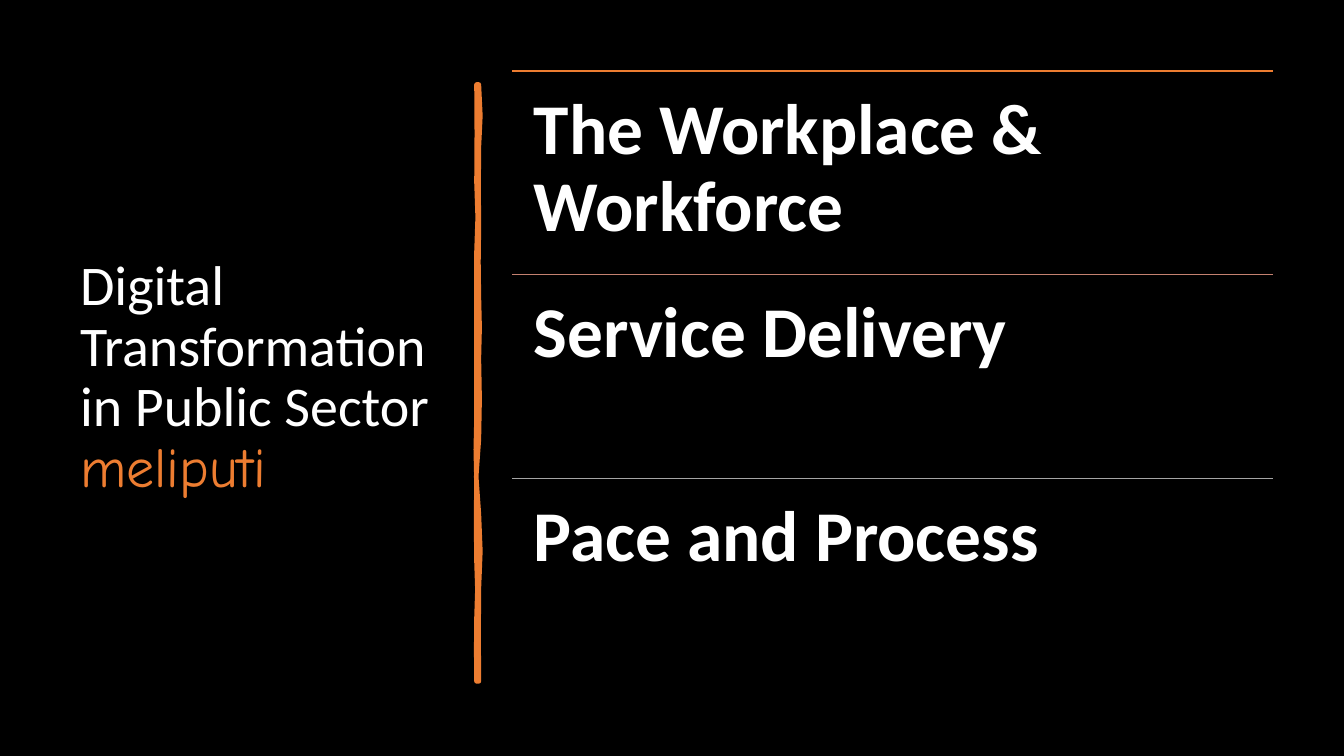
from dataclasses import dataclass

from lxml import etree
from pptx import Presentation
from pptx.dml.color import RGBColor
from pptx.enum.shapes import MSO_CONNECTOR
from pptx.enum.text import MSO_ANCHOR
from pptx.oxml.ns import qn
from pptx.slide import Slide
from pptx.text.text import TextFrame
from pptx.util import Cm, Pt

STRAIGHT = MSO_CONNECTOR.STRAIGHT
MIDDLE, TOP = MSO_ANCHOR.MIDDLE, MSO_ANCHOR.TOP

BLACK, WHITE, ORANGE = "000000", "FFFFFF", "ED7D31"
BODY_FONT, ACCENT_FONT = "Calibri", "Comic Neue"

# Lengths in centimetres
TOPIC_LEFT, TOPIC_TOP = 12.91, 1.79
TOPIC_WIDTH, TOPIC_HEIGHT = 19.17, 5.13
TOPIC_INSET = 0.54
DIVIDER_LEFT, DIVIDER_RIGHT = 12.01, 12.07
DIVIDER_TOP, DIVIDER_BOTTOM = 2.13, 17.17
CURVE_STEPS = 2


@dataclass(frozen=True)
class Topic:
    text: str
    rule_color: str


@dataclass(frozen=True)
class Wave:
    """One curve of a wavy edge: sideways pull at each third, then its end."""
    first_pull: float
    second_pull: float
    end: float


TOPICS = [
    Topic("The Workplace & Workforce", ORANGE),
    Topic("Service Delivery", "C48170"),
    Topic("Pace and Process", "A5A5A5"),
]

RIGHT_EDGE = [
    Wave(0.05, 0.05, 3.71), Wave(-0.05, 0.03, 5.74), Wave(-0.03, 0, 7.47),
    Wave(0, 0.05, 9.04), Wave(-0.05, 0.1, 11.07), Wave(-0.1, -0.08, 12.95),
    Wave(0.05, 0.05, 14.83), Wave(-0.05, 0.03, DIVIDER_BOTTOM),
]
LEFT_EDGE = [
    Wave(0.03, -0.05, 15.57), Wave(0.03, 0.03, 14.15), Wave(-0.03, 0, 12.12),
    Wave(0, -0.05, 10.54), Wave(0.03, -0.03, 8.51), Wave(0.03, -0.03, 6.35),
    Wave(0.03, 0.05, 4.6), Wave(-0.08, 0.1, DIVIDER_TOP),
]


def rgb(color: str) -> RGBColor:
    return RGBColor.from_string(color)


def edge_points(x: float, start: float, waves: list[Wave]) -> list[tuple[Cm, Cm]]:
    """Sample the cubic curves that run along one edge of the divider."""
    points = [(Cm(x), Cm(start))]
    for wave in waves:
        for step in range(1, CURVE_STEPS + 1):
            t = step / CURVE_STEPS
            pull = 3 * t * (1 - t) * ((1 - t) * wave.first_pull + t * wave.second_pull)
            points.append((Cm(x + pull), Cm(start + t * (wave.end - start))))
        start = wave.end
    return points


def add_divider(page: Slide) -> None:
    points = edge_points(DIVIDER_RIGHT, DIVIDER_TOP, RIGHT_EDGE)
    points += edge_points(DIVIDER_LEFT, DIVIDER_BOTTOM, LEFT_EDGE)
    builder = page.shapes.build_freeform(*points[0])
    builder.add_line_segments(points[1:], close=True)
    divider = builder.convert_to_shape()
    divider.shadow.inherit = False
    divider.fill.solid()
    divider.fill.fore_color.rgb = rgb(ORANGE)
    divider.line.color.rgb = rgb(ORANGE)
    divider.line.width = Pt(3.25)
    etree.SubElement(divider.element.spPr.find(qn("a:ln")), qn("a:round"))


def add_text_frame(page: Slide, left: float, top: float, width: float, height: float,
                   anchor: MSO_ANCHOR) -> TextFrame:
    box = page.shapes.add_textbox(Cm(left), Cm(top), Cm(width), Cm(height))
    frame = box.text_frame
    frame.word_wrap = True
    frame.vertical_anchor = anchor
    frame.paragraphs[0].line_spacing = 0.9
    return frame


def add_title(page: Slide) -> None:
    frame = add_text_frame(page, 1.77, 1.78, 9.5, 15.52, MIDDLE)
    para = frame.paragraphs[0]
    para.font.size = Pt(40)
    for text, font, color in [
        ("Digital Transformation in Public Sector ", BODY_FONT, WHITE),
        ("meliputi", ACCENT_FONT, ORANGE),
    ]:
        span = para.add_run()
        span.text = text
        span.font.name = font
        span.font.color.rgb = rgb(color)


def add_topic(page: Slide, topic: Topic, top: float) -> None:
    rule = page.shapes.add_connector(
        STRAIGHT, Cm(TOPIC_LEFT), Cm(top), Cm(TOPIC_LEFT + TOPIC_WIDTH), Cm(top))
    rule.line.color.rgb = rgb(topic.rule_color)
    rule.line.width = Pt(1)
    etree.SubElement(rule.element.spPr, qn("a:effectLst"))

    frame = add_text_frame(page, TOPIC_LEFT, top, TOPIC_WIDTH, TOPIC_HEIGHT, TOP)
    frame.margin_left = frame.margin_right = Cm(TOPIC_INSET)
    frame.margin_top = frame.margin_bottom = Cm(TOPIC_INSET)
    para = frame.paragraphs[0]
    para.text = topic.text
    para.font.name = BODY_FONT
    para.font.size = Pt(51)
    para.font.bold = True
    para.font.color.rgb = rgb(WHITE)


def main() -> None:
    deck = Presentation()
    deck.slide_width, deck.slide_height = Cm(33.87), Cm(19.05)
    page = deck.slides.add_slide(deck.slide_layouts[6])
    page.background.fill.solid()
    page.background.fill.fore_color.rgb = rgb(BLACK)

    add_title(page)
    add_divider(page)
    for row, topic in enumerate(TOPICS):
        add_topic(page, topic, TOPIC_TOP + row * TOPIC_HEIGHT)
    deck.save("out.pptx")


if __name__ == "__main__":
    main()
